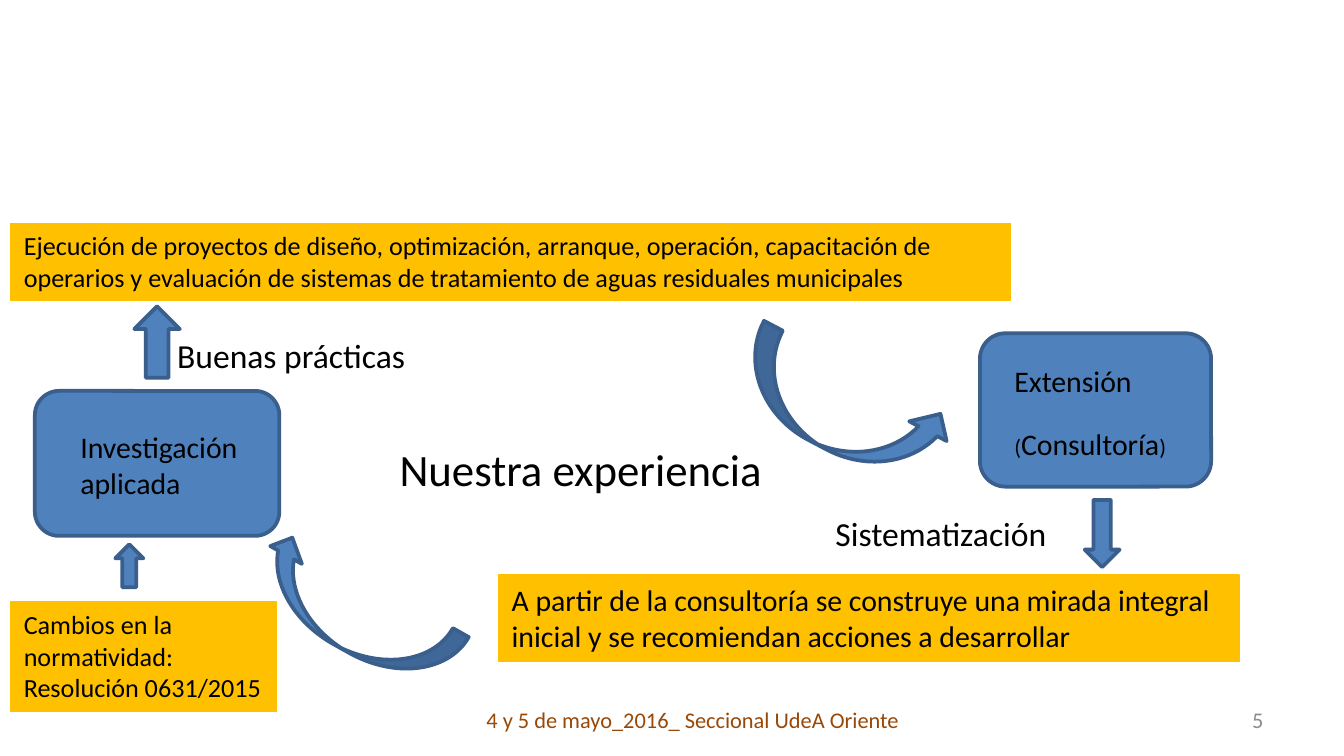
from pptx import Presentation
from pptx.dml.color import RGBColor
from pptx.enum.shapes import MSO_SHAPE
from pptx.enum.text import MSO_ANCHOR, PP_ALIGN
from pptx.util import Cm, Pt

RECTANGLE, ROUNDED = MSO_SHAPE.RECTANGLE, MSO_SHAPE.ROUNDED_RECTANGLE
UP, DOWN, CURVED = MSO_SHAPE.UP_ARROW, MSO_SHAPE.DOWN_ARROW, MSO_SHAPE.CURVED_RIGHT_ARROW
LEFT, CENTER, RIGHT = PP_ALIGN.LEFT, PP_ALIGN.CENTER, PP_ALIGN.RIGHT
TOP, MIDDLE = MSO_ANCHOR.TOP, MSO_ANCHOR.MIDDLE

FONT = "Calibri"
BLACK = RGBColor(0x00, 0x00, 0x00)
GRAY = RGBColor(0x8C, 0x8C, 0x8C)
BROWN = RGBColor(0x98, 0x48, 0x07)
AMBER = RGBColor(0xFF, 0xC0, 0x00)
BLUE = RGBColor(0x4F, 0x81, 0xBD)
DARK_BLUE = RGBColor(0x3A, 0x5F, 0x8C)

# Content: boxes are (left, top, width, height) in centimetres
TITLE = ("Nuestra experiencia", (3.94, 8.53, 14.07, 0.64))
FOOTER = ("4 y 5 de mayo_2016_ Seccional UdeA Oriente", (8.69, 13.23, 8.81, 0.76))
PAGE_NUMBER = ("5", (18.21, 13.23, 5.92, 0.76))

NOTES = [  # text, box, size
    ("Ejecución de proyectos de diseño, optimización, arranque, operación, "
     "capacitación de operarios y evaluación de sistemas de tratamiento de "
     "aguas residuales municipales", (0.2, 4.22, 18.9, 1.45), 14),
    ("A partir de la consultoría se construye una mirada integral inicial y "
     "se recomiendan acciones a desarrollar", (9.42, 10.87, 14, 1.63), 16),
    ("Cambios en la normatividad: Resolución 0631/2015", (0.2, 11.38, 5.03, 2.06), 14),
]
BLUE_SHAPES = [  # kind, box, rotation, mirrored
    (CURVED, (15.11, 5.66, 1.6, 4.17), 297.8, False),
    (CURVED, (6.02, 9.53, 1.37, 4.17), 119.4, True),
    (ROUNDED, (18.52, 6.3, 4.37, 2.9), 0, False),
    (ROUNDED, (0.66, 7.39, 4.62, 2.74), 0, False),
    (DOWN, (20.5, 9.45, 0.66, 1.27), 0, False),
    (UP, (2.54, 5.79, 0.86, 1.35), 0, False),
    (UP, (2.18, 10.29, 0.53, 0.81), 0, False),
]
LABELS = [  # paragraphs of (text, size) runs, box
    ([[("Extensión", 16)], [("(", 12), ("Consultoría", 16), (")", 12)]],
     (18.92, 6.73, 4.5, 2.13)),
    ([[("Investigación aplicada", 16)]], (1.27, 7.98, 4.83, 1.63)),
    ([[("Buenas prácticas", 18)]], (3.1, 6.2, 5.16, 1.02)),
    ([[("Sistematización", 18)]], (15.54, 9.58, 5.16, 1.02)),
]
PARAGRAPH_GAP = 14.65


def write_text(shape, paragraphs, *, color=BLACK, align=LEFT, anchor=TOP):
    frame = shape.text_frame
    frame.word_wrap = True
    frame.vertical_anchor = anchor
    for index, runs in enumerate(paragraphs):
        paragraph = frame.add_paragraph() if index else frame.paragraphs[0]
        paragraph.alignment = align
        if index:
            paragraph.space_before = Pt(PARAGRAPH_GAP)
        for text, size in runs:
            run = paragraph.add_run()
            run.text = text
            run.font.name = FONT
            run.font.size = Pt(size)
            run.font.color.rgb = color


def add_text(slide, paragraphs, box, **text_format):
    shape = slide.shapes.add_textbox(*map(Cm, box))
    write_text(shape, paragraphs, **text_format)


def add_filled(slide, kind, box, fill, line, line_width):
    shape = slide.shapes.add_shape(kind, *map(Cm, box))
    shape.shadow.inherit = False
    shape.fill.solid()
    shape.fill.fore_color.rgb = fill
    shape.line.color.rgb = line
    shape.line.width = Pt(line_width)
    return shape


def main():
    presentation = Presentation()
    presentation.slide_width, presentation.slide_height = Cm(25.4), Cm(14.29)
    slide = presentation.slides.add_slide(presentation.slide_layouts[6])

    # Title, footer and page number
    for (text, box), size, color, align in [
        (PAGE_NUMBER, 12, GRAY, RIGHT),
        (FOOTER, 12, BROWN, CENTER),
        (TITLE, 24, BLACK, CENTER),
    ]:
        add_text(slide, [[(text, size)]], box, color=color, align=align, anchor=MIDDLE)

    # Amber notes
    for text, box, size in NOTES:
        note = add_filled(slide, RECTANGLE, box, AMBER, AMBER, 0.75)
        write_text(note, [[(text, size)]])

    # Blue boxes and arrows
    for kind, box, rotation, mirrored in BLUE_SHAPES:
        shape = add_filled(slide, kind, box, BLUE, DARK_BLUE, 2)
        shape.rotation = rotation
        if mirrored:
            shape.element.spPr.xfrm.set("flipH", "1")

    # Labels on and beside the blue shapes
    for paragraphs, box in LABELS:
        add_text(slide, paragraphs, box)

    presentation.save("out.pptx")


if __name__ == "__main__":
    main()
